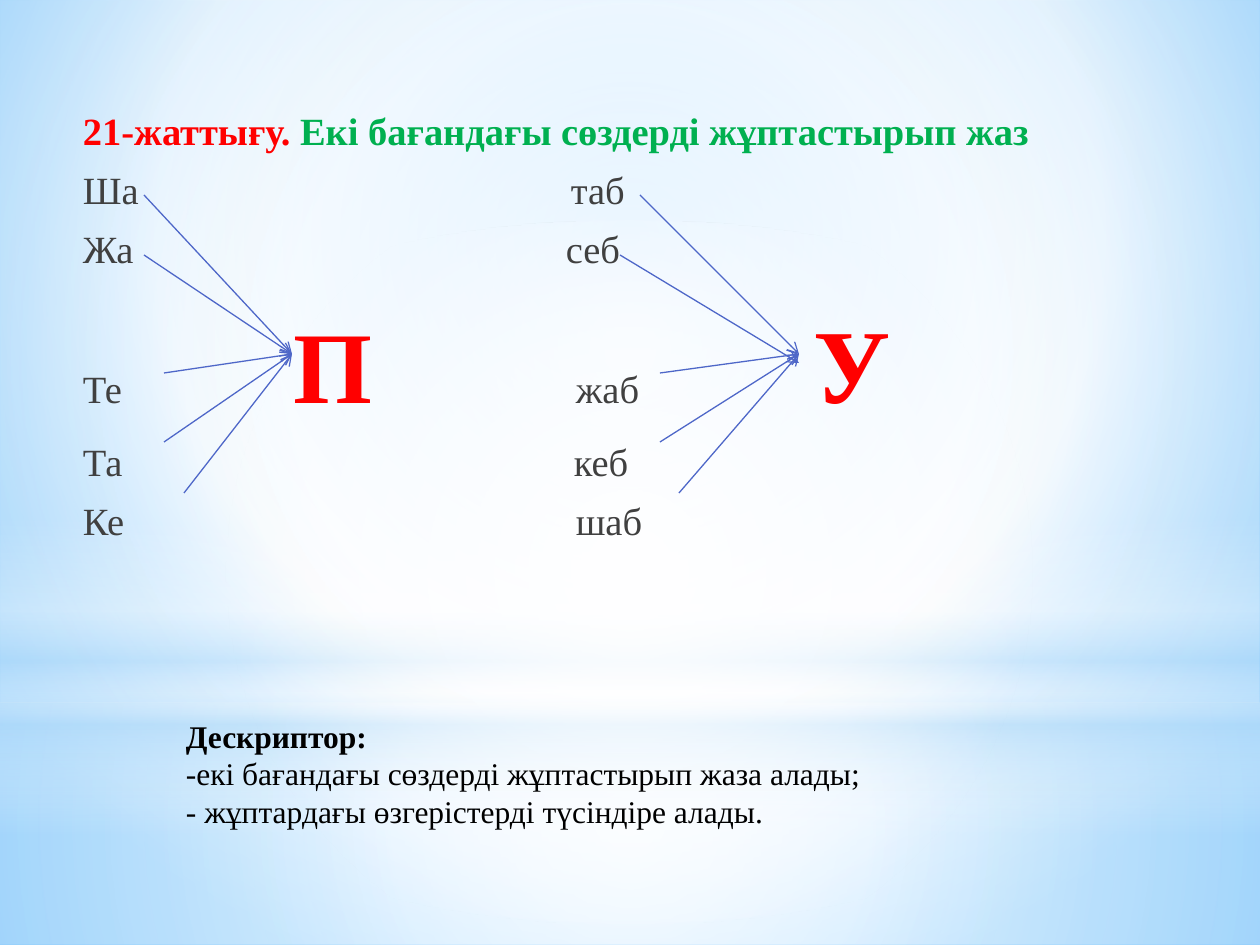
from lxml import etree
from pptx import Presentation
from pptx import util as u
from pptx.dml.color import RGBColor
from pptx.enum import shapes, text
from pptx.oxml.ns import qn

PX = 914400 / 126
FONT = "Times New Roman"
COLORS = {
    "red": "FF0000", "green": "00B050", "gray": "404040", "black": "000000",
    "arrow": "4E67C8", "white": "FFFFFF", "pale": "B4DCFA",
    "sky": "9ED5FF", "deep": "5BB9FF",
}


def px(length):
    return u.Emu(round(length * PX))


def set_gradient(fill, element, stops, center=None, angle=90):
    """Stops are (position, color, opacity); center gives a circular gradient."""
    fill.solid()
    solid = element.find(".//" + qn("a:solidFill"))
    gradient = etree.Element(qn("a:gradFill"), rotWithShape="1")
    stop_list = etree.SubElement(gradient, qn("a:gsLst"))
    for position, color, opacity in stops:
        stop = etree.SubElement(stop_list, qn("a:gs"), pos=str(position * 1000))
        tint = etree.SubElement(stop, qn("a:srgbClr"), val=COLORS[color])
        if opacity < 100:
            etree.SubElement(tint, qn("a:alpha"), val=str(opacity * 1000))
    if center:
        route = etree.SubElement(gradient, qn("a:path"), path="circle")
        edges = {side: str(value * 1000) for side, value in zip("ltrb", center)}
        etree.SubElement(route, qn("a:fillToRect"), **edges)
    else:
        etree.SubElement(gradient, qn("a:lin"), ang=str(angle * 60000), scaled="0")
    solid.getparent().replace(solid, gradient)


def add_glow(page, box, kind, stops, center=None):
    shape = page.shapes.add_shape(kind, *map(px, box))
    shape.shadow.inherit = False
    shape.line.fill.background()
    set_gradient(shape.fill, shape._element, stops, center)


def add_backdrop(page, box):
    left, top, width, height = box
    horizon = 703
    middle = (50, 50, 50, 50)
    rect, oval = shapes.MSO_SHAPE.RECTANGLE, shapes.MSO_SHAPE.OVAL
    set_gradient(page.background.fill, page._element,
                 [(0, "sky", 100), (60, "white", 100), (100, "deep", 100)],
                 (20, 10, 20, 60))
    # Floor, wall, horizon band and central light
    add_glow(page, (left, top + horizon, width, height - horizon), rect,
             [(0, "white", 91), (37, "white", 76), (100, "pale", 79)], middle)
    add_glow(page, (left, top, width, horizon), rect,
             [(0, "white", 89), (48, "white", 62), (100, "pale", 79)], middle)
    add_glow(page, (left, top + 519, width, 315), rect,
             [(0, "white", 0), (29, "white", 30), (45, "pale", 40),
              (55, "white", 26), (65, "pale", 60), (100, "white", 0)])
    add_glow(page, (left, top + 221, width, horizon), oval,
             [(0, "white", 100), (56, "white", 0)], middle)


def add_frame(page, box, inset_left, inset_top):
    frame = page.shapes.add_textbox(*map(px, box)).text_frame
    frame.word_wrap = True
    frame.vertical_anchor = text.MSO_ANCHOR.TOP
    frame.margin_left, frame.margin_top = px(inset_left), px(inset_top)
    return frame


def add_para(frame, first, line, tabs=()):
    para = frame.paragraphs[0] if first else frame.add_paragraph()
    para.line_spacing = px(line)
    if tabs:
        tab_list = etree.SubElement(para._p.get_or_add_pPr(), qn("a:tabLst"))
        for stop in tabs:
            etree.SubElement(tab_list, qn("a:tab"), pos=str(px(stop)), algn="l")
    return para


def add_span(para, words, size=22, color="gray", bold=False):
    span = para.add_run()
    span.text = words
    span.font.name = FONT
    span.font.size = u.Pt(size)
    span.font.bold = bold
    span.font.color.rgb = RGBColor.from_string(COLORS[color])


def add_exercise(page, box):
    frame = add_frame(page, box, 19, 8)
    title = add_para(frame, True, 44)
    add_span(title, "21-жаттығу. ", color="red", bold=True)
    add_span(title, "Екі бағандағы сөздерді жұптастырып жаз", color="green", bold=True)

    # Word pairs, with the second column at a tab stop
    pairs = [("Ша", "таб", 488), ("Жа", "себ", 483), ("Те", "жаб", 493),
             ("Та", "кеб", 491), ("Ке", "шаб", 493)]
    for first_part, second_part, column in pairs:
        if first_part != "Те":
            para = add_para(frame, False, 59, [column])
            add_span(para, f"{first_part}\t{second_part}")
            continue
        # Middle row carries the two large letters
        para = add_para(frame, False, 154, [211, column, 731])
        add_span(para, first_part + "\t")
        add_span(para, "П", size=58, color="red", bold=True)
        add_span(para, f"\t{second_part}\t")
        add_span(para, "У", size=60, color="red", bold=True)


def add_arrow(page, start, end):
    arrow = page.shapes.add_connector(shapes.MSO_CONNECTOR.STRAIGHT,
                                      *map(px, start + end))
    arrow.line.color.rgb = RGBColor.from_string(COLORS["arrow"])
    arrow.line.width = u.Pt(0.75)
    etree.SubElement(arrow.line._get_or_add_ln(), qn("a:tailEnd"), type="arrow")
    etree.SubElement(arrow._element.spPr, qn("a:effectLst"))


def add_fan(page, box, starts, drops=(0, 0, 0, 0, 0)):
    """Arrows from the five words meet on the right edge of the box."""
    left, top, width, _ = box
    rows = (0, 60, 178, 247, 298)
    for start, row, drop in zip(starts, rows, drops):
        add_arrow(page, (left + start, top + row), (left + width, top + 159 + drop))


def add_descriptor(page, box):
    frame = add_frame(page, box, 13, 6)
    lines = ["Дескриптор:",
             "-екі бағандағы сөздерді жұптастырып жаза алады;",
             "- жұптардағы өзгерістерді түсіндіре алады."]
    for index, line in enumerate(lines):
        para = add_para(frame, index == 0, 37.5)
        add_span(para, line, size=18, color="black", bold=index == 0)


def main():
    deck = Presentation()
    deck.slide_width, deck.slide_height = px(1260), px(945)
    page = deck.slides.add_slide(deck.slide_layouts[6])
    add_backdrop(page, (0, 0, 1260, 945))
    add_exercise(page, (64, 101, 1160, 640))
    add_fan(page, (144, 195, 148, 298), (0, 0, 20, 20, 40))
    add_fan(page, (620, 195, 179, 298), (20, 0, 40, 40, 59), (0, 9, 0, 0, 0))
    add_descriptor(page, (173, 711, 1023, 127))
    deck.save("out.pptx")


if __name__ == "__main__":
    main()
